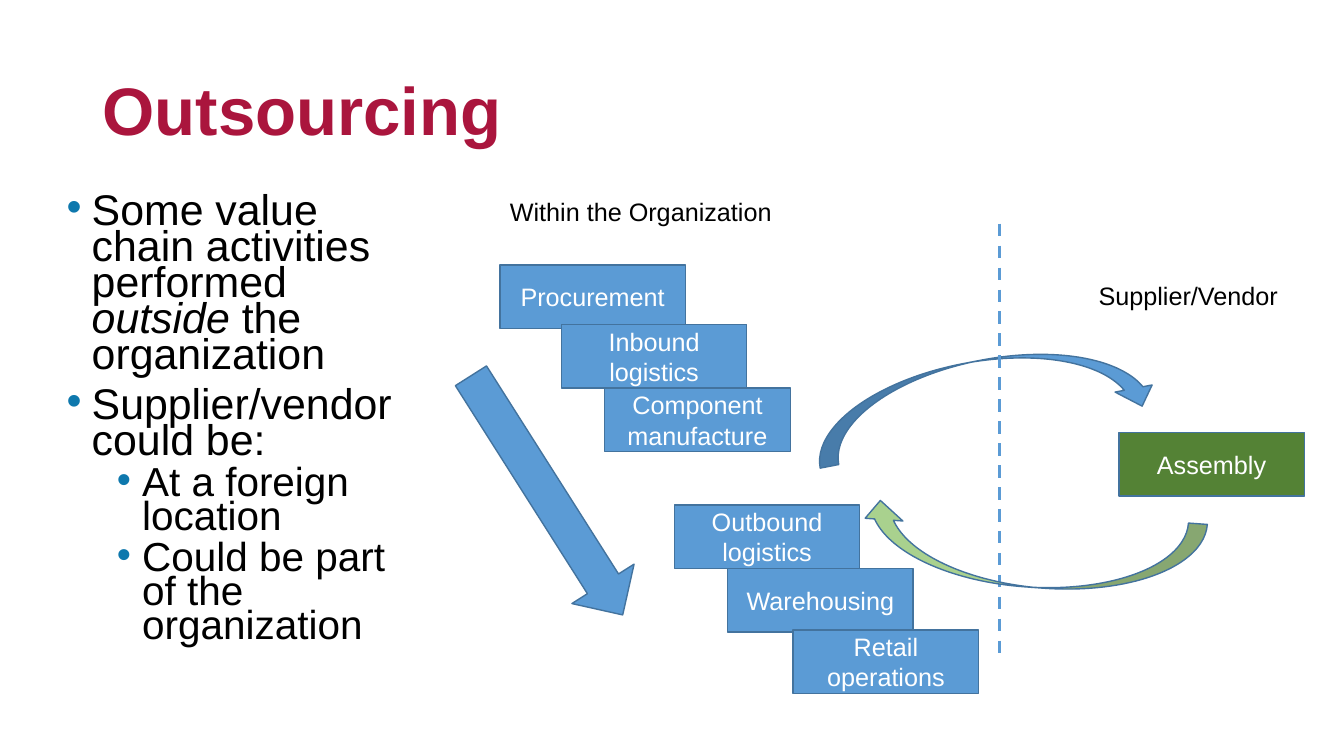
from lxml.etree import SubElement
from pptx import Presentation
from pptx.dml.color import RGBColor
from pptx.enum.dml import MSO_LINE
from pptx.enum.shapes import MSO_CONNECTOR, MSO_SHAPE
from pptx.enum.text import MSO_ANCHOR, MSO_AUTO_SIZE, PP_ALIGN
from pptx.oxml.ns import qn
from pptx.util import Pt

HUES = {"title": "AA153D", "text": "000000", "white": "FFFFFF",
        "bullet": "0E78AD", "blue": "5B9BD5", "edge": "43739E",
        "green": "548235", "light": "A9D18E"}
BOX = (132.5, 45.4)


def hue(name):
    return RGBColor.from_string(HUES[name])


def write(para, text, size=18, color="text", bold=False, italic=False,
          align=PP_ALIGN.LEFT):
    para.alignment = align
    run = para.add_run()
    run.text = text
    font = run.font
    font.name, font.size = "Arial", Pt(size)
    font.bold, font.italic = bold, italic
    font.color.rgb = hue(color)


def place(item, x, y, w, h):
    item.left, item.top, item.width, item.height = Pt(x), Pt(y), Pt(w), Pt(h)


def draw(slide, kind, x, y, w, h, fill="blue", turn=0):
    item = slide.shapes.add_shape(kind, Pt(x), Pt(y), Pt(w), Pt(h))
    item.shadow.inherit = False
    item.fill.solid()
    item.fill.fore_color.rgb = hue(fill)
    item.line.color.rgb = hue("edge")
    item.line.width = Pt(1)
    item.rotation = turn
    return item


def step(slide, x, y, text, fill="blue"):
    frame = draw(slide, MSO_SHAPE.RECTANGLE, x, y, *BOX, fill).text_frame
    frame.word_wrap = True
    frame.vertical_anchor = MSO_ANCHOR.MIDDLE
    write(frame.paragraphs[0], text, color="white", align=PP_ALIGN.CENTER)


def label(slide, x, y, w, text):
    frame = slide.shapes.add_textbox(Pt(x), Pt(y), Pt(w), Pt(29)).text_frame
    frame.word_wrap = True
    write(frame.paragraphs[0], text)


def bullet(para, level):
    para.level = level
    para.line_spacing = 0.7
    para.space_before = Pt(5 if level else 10)
    props = para._p.get_or_add_pPr()
    props.set("marL", str(Pt(54 if level else 18)))
    props.set("indent", str(Pt(-18)))
    tint = SubElement(props, qn("a:buClr"))
    SubElement(tint, qn("a:srgbClr")).set("val", HUES["bullet"])
    SubElement(props, qn("a:buFont")).set("typeface", "Arial")
    SubElement(props, qn("a:buChar")).set("char", "•")


def head(slide, x, y, w, h):
    title = slide.shapes.title
    place(title, x, y, w, h)
    frame = title.text_frame
    frame.auto_size = MSO_AUTO_SIZE.NONE
    frame.vertical_anchor = MSO_ANCHOR.MIDDLE
    frame.paragraphs[0].line_spacing = 0.9
    write(frame.paragraphs[0], "Outsourcing", size=48, color="title", bold=True)


def points(slide, x, y, w, h):
    body = slide.placeholders[1]
    place(body, x, y, w, h)
    frame = body.text_frame
    frame.auto_size = MSO_AUTO_SIZE.NONE
    items = [(0, ["Some value chain activities performed ", "outside ",
                  "the organization"]),
             (0, ["Supplier/vendor could be:"]),
             (1, ["At a foreign location"]),
             (1, ["Could be part of the organization"])]
    for i, (level, parts) in enumerate(items):
        para = frame.add_paragraph() if i else frame.paragraphs[0]
        bullet(para, level)
        for part in parts:
            write(para, part, size=28.9 if level else 30.6,
                  italic=part == "outside ")


def chain(slide, x, y):
    label(slide, x, y, 233, "Within the Organization")
    draw(slide, MSO_SHAPE.DOWN_ARROW, x + 7.2, y + 115.9, 52.6, 202.3,
         turn=327.6)
    steps = [(0, 52.5, "Procurement"), (43.9, 95, "Inbound logistics"),
             (74.9, 140.4, "Component manufacture"),
             (124.6, 223.9, "Outbound logistics"),
             (162.7, 269.3, "Warehousing"),
             (209.5, 313.2, "Retail operations")]
    for dx, dy, text in steps:
        step(slide, x + dx, y + dy, text)


def vendor(slide, x, y):
    # Arrow out to the supplier
    size = (54, 247.7)
    draw(slide, MSO_SHAPE.CURVED_LEFT_ARROW, x, y, *size, turn=259.1)

    # Border of the organization
    edge = slide.shapes.add_connector(
        MSO_CONNECTOR.STRAIGHT, Pt(x + 38.8), Pt(y - 0.8),
        Pt(x + 38.8), Pt(y + 307.4))
    edge.line.color.rgb = hue("blue")
    edge.line.width = Pt(2.25)
    edge.line.dash_style = MSO_LINE.DASH
    SubElement(edge._element.spPr, qn("a:effectLst"))

    # Supplier and the arrow back
    label(slide, x + 102.2, y + 36, 169.2, "Supplier/Vendor")
    step(slide, x + 123.8, y + 148.3, "Assembly", "green")
    draw(slide, MSO_SHAPE.CURVED_LEFT_ARROW, x + 34.5, y + 108, *size,
         "light", 94.2)


def main():
    deck = Presentation()
    deck.slide_width, deck.slide_height = Pt(960), Pt(540)
    slide = deck.slides.add_slide(deck.slide_layouts[1])
    head(slide, 66, 28.8, 699, 104.4)
    points(slide, 40.3, 136.8, 270.7, 342.7)
    chain(slide, 357.1, 136.8)
    vendor(slide, 675.4, 160.6)
    deck.save("out.pptx")


if __name__ == "__main__":
    main()
